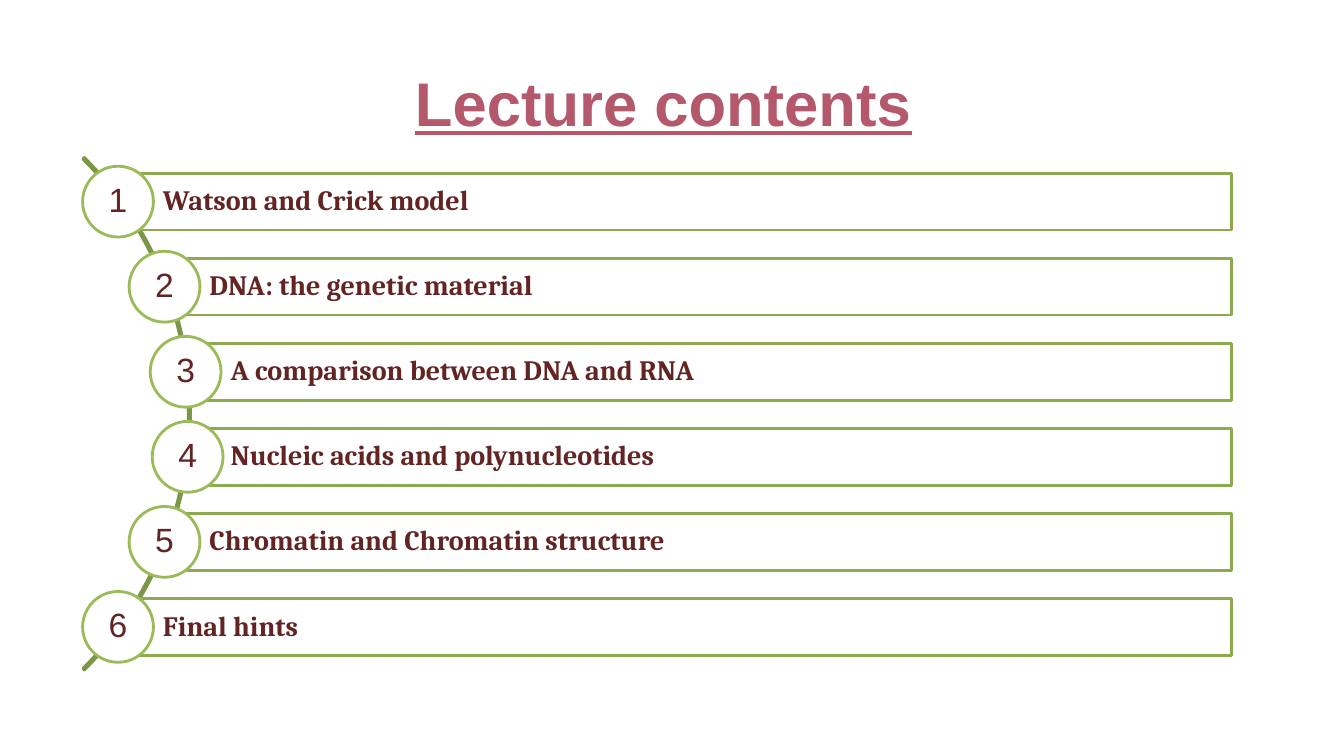
from dataclasses import dataclass

from pptx import Presentation
from pptx.dml.color import RGBColor
from pptx.enum.shapes import MSO_SHAPE
from pptx.enum.text import MSO_ANCHOR, PP_ALIGN
from pptx.shapes.autoshape import Shape
from pptx.slide import Slide
from pptx.util import Pt

COLORS = {
    "title": "B4586C",
    "text": "632523",
    "arc": "7C9647",
    "bar": "8DAA51",
    "ring": "9BBB59",
    "white": "FFFFFF",
}
BAR_TOP, BAR_HEIGHT, BAR_RIGHT = 123.8, 40.5, 879.8
PITCH = 60.75
RING_SIZE = 50.6


@dataclass
class Topic:
    title: str
    bar_left: float
    ring_left: float


TOPICS = [
    Topic("Watson and Crick model", 84.2, 59),
    Topic("DNA: the genetic material", 117.4, 92.2),
    Topic("A comparison between DNA and RNA", 132.5, 107.3),
    Topic("Nucleic acids and polynucleotides", 132.5, 108.7),
    Topic("Chromatin and Chromatin structure", 117.4, 92.2),
    Topic("Final hints", 84.2, 59),
]


def rgb(name: str) -> RGBColor:
    return RGBColor.from_string(COLORS[name])


def add_outlined(s: Slide, kind: MSO_SHAPE, left: float, top: float,
                 width: float, height: float, line: str) -> Shape:
    sp = s.shapes.add_shape(kind, Pt(left), Pt(top), Pt(width), Pt(height))
    sp.shadow.inherit = False
    sp.fill.solid()
    sp.fill.fore_color.rgb = rgb("white")
    sp.line.color.rgb = rgb(line)
    sp.line.width = Pt(2)
    return sp


def set_text(sp: Shape, text: str, font: str, size: float, color: str,
             align: PP_ALIGN, bold: bool = False) -> None:
    tf = sp.text_frame
    tf.word_wrap = True
    tf.vertical_anchor = MSO_ANCHOR.MIDDLE
    tf.text = text
    p = tf.paragraphs[0]
    p.alignment = align
    p.font.name = font
    p.font.size = Pt(size)
    p.font.bold = bold
    p.font.color.rgb = rgb(color)


def set_insets(sp: Shape, left: float, top: float, right: float, bottom: float) -> None:
    tf = sp.text_frame
    tf.margin_left, tf.margin_top = Pt(left), Pt(top)
    tf.margin_right, tf.margin_bottom = Pt(right), Pt(bottom)


def add_title(s: Slide) -> None:
    sp = s.shapes.title
    sp.left, sp.top, sp.width, sp.height = Pt(135.4), Pt(34.6), Pt(676.8), Pt(76.3)
    set_text(sp, "Lecture contents", "Arial", 44, "title", PP_ALIGN.CENTER, True)
    sp.text_frame.paragraphs[0].font.underline = True


def add_arc(s: Slide) -> None:
    sp = add_outlined(s, MSO_SHAPE.BLOCK_ARC, -381.6, 36.7, 517.7, 517.7, "arc")
    sp.fill.background()
    for i, value in enumerate((189, 27, 0.003)):
        sp.adjustments[i] = value


def add_topic(s: Slide, number: int, topic: Topic) -> None:
    top = BAR_TOP + (number - 1) * PITCH
    bar = add_outlined(s, MSO_SHAPE.RECTANGLE, topic.bar_left, top,
                       BAR_RIGHT - topic.bar_left, BAR_HEIGHT, "bar")
    set_text(bar, topic.title, "Cambria", 20, "text", PP_ALIGN.LEFT, True)
    set_insets(bar, 32.2, 4, 4, 4)
    bar.text_frame.paragraphs[0].line_spacing = 0.9

    ring_top = top + (BAR_HEIGHT - RING_SIZE) / 2
    ring = add_outlined(s, MSO_SHAPE.OVAL, topic.ring_left, ring_top,
                        RING_SIZE, RING_SIZE, "ring")
    set_text(ring, str(number), "Arial", 24, "text", PP_ALIGN.CENTER)
    set_insets(ring, 0, 0, 0, 4)


def main() -> None:
    prs = Presentation()
    prs.slide_width, prs.slide_height = Pt(960), Pt(540)
    s = prs.slides.add_slide(prs.slide_layouts[5])
    add_title(s)
    add_arc(s)
    for number, topic in enumerate(TOPICS, 1):
        add_topic(s, number, topic)
    prs.save("out.pptx")


if __name__ == "__main__":
    main()
